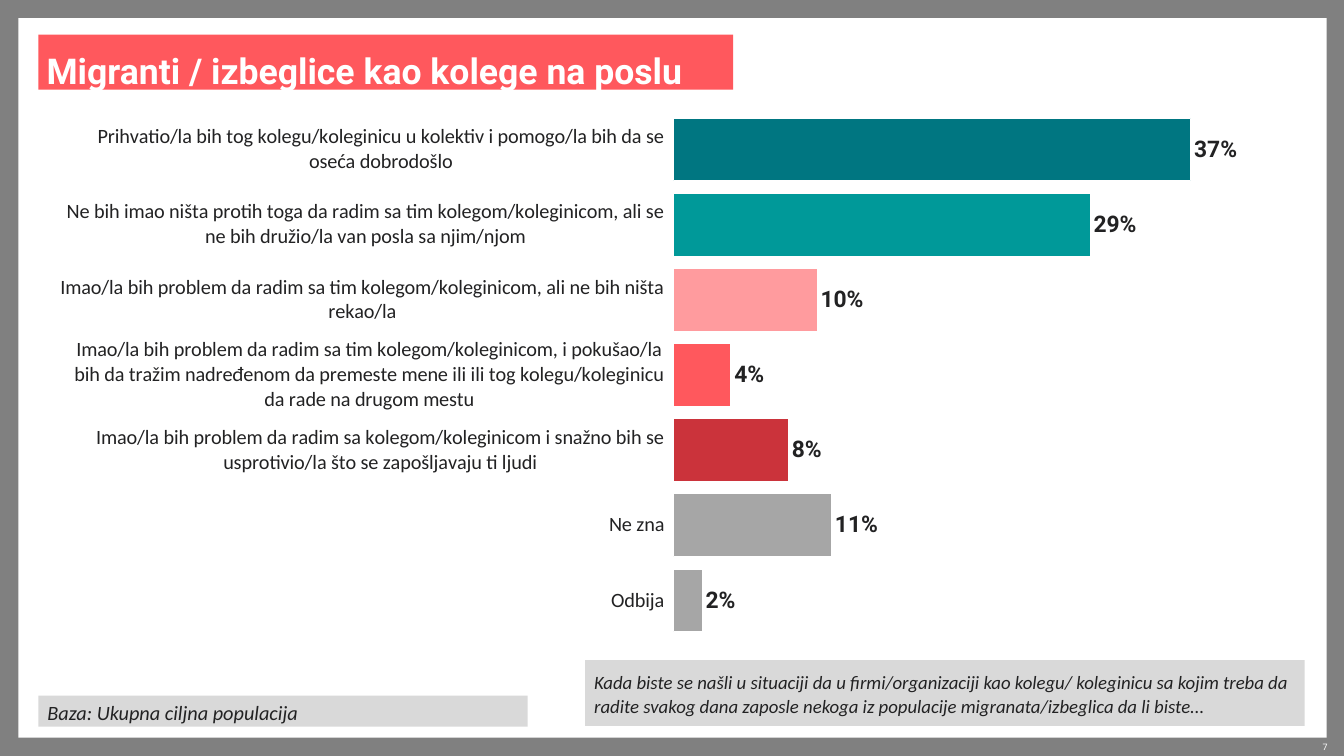
from lxml.etree import SubElement
from pptx import Presentation
from pptx.chart.data import CategoryChartData
from pptx.dml.color import RGBColor
from pptx.enum.chart import XL_CHART_TYPE, XL_LABEL_POSITION, XL_TICK_MARK
from pptx.enum.shapes import MSO_SHAPE
from pptx.enum.text import MSO_ANCHOR, PP_ALIGN
from pptx.oxml.ns import qn
from pptx.util import Inches, Pt

WHITE = RGBColor(0xFF, 0xFF, 0xFF)
INK = RGBColor(0x22, 0x22, 0x23)
FRAME = RGBColor(0x80, 0x80, 0x80)
PALE = RGBColor(0xD9, 0xD9, 0xD9)
GREY = RGBColor(0xA6, 0xA6, 0xA6)
CORAL = RGBColor(0xFF, 0x58, 0x5D)
PINK = RGBColor(0xFF, 0x9B, 0x9E)
RED = RGBColor(0xCB, 0x33, 0x3B)
TEAL = RGBColor(0x00, 0x99, 0x99)
DEEP = RGBColor(0x00, 0x76, 0x81)

ANSWERS = [
    ("Prihvatio/la bih tog kolegu/koleginicu u kolektiv i pomogo/la bih "
     "da se oseća dobrodošlo", 36, DEEP),
    ("Ne bih imao ništa protih toga da radim sa tim kolegom/koleginicom, "
     "ali se ne bih družio/la van posla sa njim/njom", 29, TEAL),
    ("Imao/la bih problem da radim sa tim kolegom/koleginicom, "
     "ali ne bih ništa rekao/la", 10, PINK),
    ("Imao/la bih problem da radim sa tim kolegom/koleginicom, i pokušao/la "
     "bih da tražim nadređenom da premeste mene ili ili tog "
     "kolegu/koleginicu da rade na drugom mestu", 4, CORAL),
    ("Imao/la bih problem da radim sa kolegom/koleginicom i snažno bih se "
     "usprotivio/la što se zapošljavaju ti ljudi", 8, RED),
    ("Ne zna", 11, GREY),
    ("Odbija", 2, GREY),
]
PLOT = {"x": 0.514, "y": 0.001, "w": 0.477, "h": 0.999}
NOTE = {"line_spacing": 1.1, "space_before": Pt(6), "space_after": Pt(6)}


def style(font, size, name="Roboto", color=INK, **more):
    values = {"size": Pt(size), "name": name, **more}
    for key, value in values.items():
        setattr(font, key, value)
    font.color.rgb = color


def add_panel(slide, box, fill):
    panel = slide.shapes.add_shape(MSO_SHAPE.RECTANGLE, *map(Inches, box))
    panel.shadow.inherit = False
    panel.fill.solid()
    panel.fill.fore_color.rgb = fill
    panel.line.fill.background()
    return panel


def write(shape, text, insets, layout, **font):
    """Fill a shape with one paragraph; insets run left, top, right, bottom."""
    frame = shape.text_frame
    frame.word_wrap = True
    frame.vertical_anchor = MSO_ANCHOR.MIDDLE
    for side, inset in zip(("left", "top", "right", "bottom"), insets):
        setattr(frame, f"margin_{side}", Inches(inset))
    para = frame.paragraphs[0]
    for key, value in {"alignment": PP_ALIGN.LEFT, **layout}.items():
        setattr(para, key, value)
    run = para.add_run()
    run.text = text
    style(run.font, **font)


def add_note(slide, box, text, size):
    write(add_panel(slide, box, PALE), text, (0.1, 0, 0.1, 0), NOTE,
          size=size, name="Calibri", italic=True)


def place_plot(chart):
    """Fix the inner plot area as fractions of the chart."""
    area = chart.plots[0]._element.getparent()
    layout = area.find(qn("c:layout"))
    if layout is None:
        layout = SubElement(area, qn("c:layout"))
        area.insert(0, layout)
    manual = SubElement(layout, qn("c:manualLayout"))
    modes = {"layoutTarget": "inner", "xMode": "edge", "yMode": "edge"}
    for tag, value in {**modes, **PLOT}.items():
        SubElement(manual, qn(f"c:{tag}")).set("val", str(value))


def style_axes(chart):
    answers = chart.category_axis
    answers.reverse_order = True
    answers.major_tick_mark = XL_TICK_MARK.OUTSIDE
    answers.format.line.fill.background()
    style(answers.tick_labels.font, 16, "Calibri")
    scale = chart.value_axis
    scale.minimum_scale, scale.maximum_scale = 0, 39.5
    scale.has_major_gridlines = False
    scale.visible = False


def style_bars(chart):
    plot = chart.plots[0]
    plot.gap_width = 20
    plot.vary_by_categories = False
    bars = plot.series[0]
    for index, (_, _, color) in enumerate(ANSWERS):
        look = bars.points[index].format
        look.fill.solid()
        look.fill.fore_color.rgb = color
        look.line.color.rgb = WHITE
        look.line.width = Pt(0.75)
    labels = bars.data_labels
    values = {"show_value": True, "number_format": '#"%"',
              "number_format_is_linked": False,
              "position": XL_LABEL_POSITION.OUTSIDE_END}
    for key, value in values.items():
        setattr(labels, key, value)
    style(labels.font, 18, bold=True)
    # The first label reads one point above its bar's value.
    first = bars.points[0].data_label
    run = first.text_frame.paragraphs[0].add_run()
    run.text = "37%"
    style(run.font, 18, bold=True)
    first.position = XL_LABEL_POSITION.OUTSIDE_END


def add_bars(slide, box):
    data = CategoryChartData()
    data.categories = [text for text, _, _ in ANSWERS]
    data.add_series("Series 1", [value for _, value, _ in ANSWERS])
    chart = slide.shapes.add_chart(
        XL_CHART_TYPE.BAR_CLUSTERED, *map(Inches, box), data).chart
    chart.has_legend = False
    chart.has_title = False
    style(chart.font, 18)
    place_plot(chart)
    style_axes(chart)
    style_bars(chart)


def main():
    deck = Presentation()
    deck.slide_width, deck.slide_height = Inches(14.7), Inches(8.27)
    slide = deck.slides.add_slide(deck.slide_layouts[6])
    back = slide.background.fill
    back.solid()
    back.fore_color.rgb = FRAME

    add_panel(slide, (0.2, 0.2, 14.31, 7.87), WHITE)
    number = slide.shapes.add_textbox(
        *map(Inches, (13.73, 8.1, 0.79, 0.13)))
    write(number, "7", (0, 0, 0, 0),
          {"alignment": PP_ALIGN.RIGHT, "line_spacing": 1.1},
          size=7, color=WHITE)
    title = add_panel(slide, (0.42, 0.38, 7.6, 0.6), CORAL)
    write(title, "Migranti / izbeglice kao kolege na poslu",
          (0.09, 0.08, 0.09, 0), {"line_spacing": Pt(41)},
          size=28, color=WHITE, bold=True)
    add_note(slide, (0.42, 7.61, 5.35, 0.34),
             "Baza: Ukupna ciljna populacija", 16)
    add_note(slide, (6.4, 7.22, 7.87, 0.72),
             "Kada biste se našli u situaciji da u firmi/organizaciji kao "
             "kolegu/ koleginicu sa kojim treba da radite svakog dana zaposle "
             "nekoga iz populacije migranata/izbeglica da li biste...", 14.8)
    add_bars(slide, (0.66, 1.22, 13.03, 5.76))
    deck.save("out.pptx")


if __name__ == "__main__":
    main()
